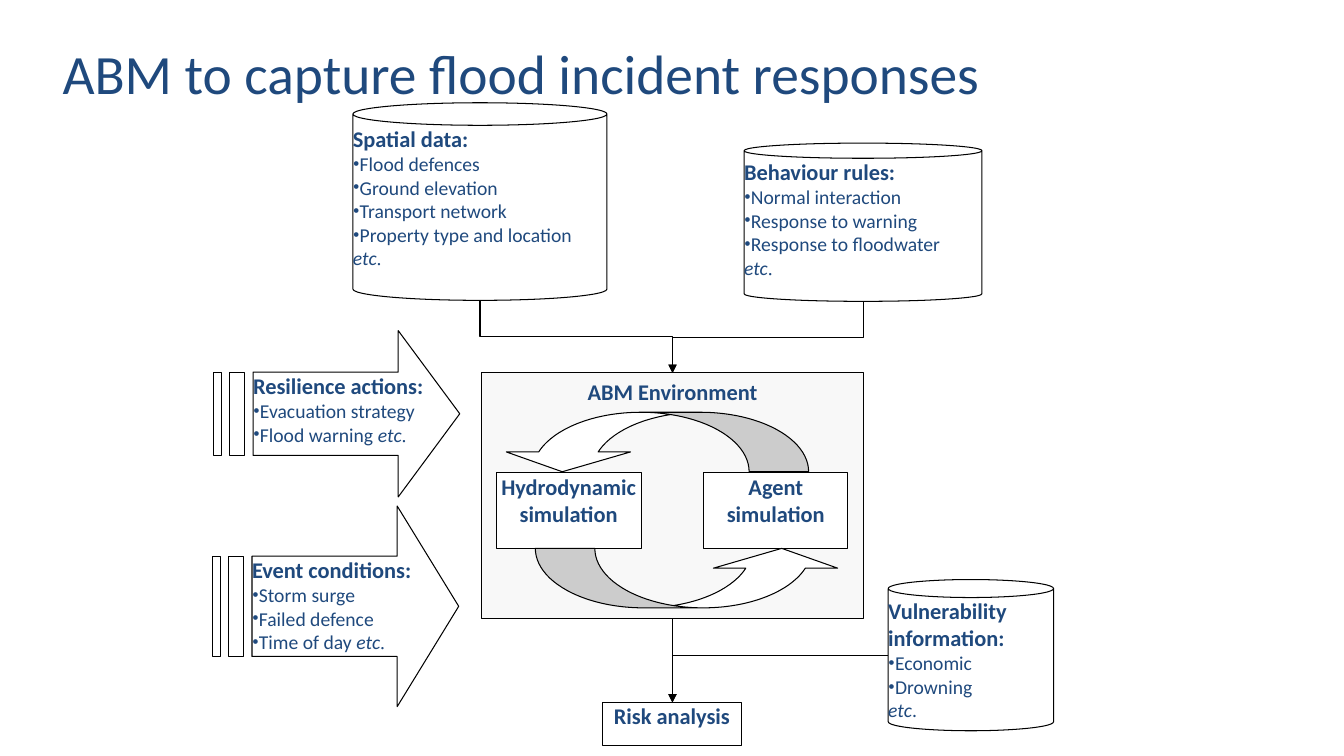
from lxml.etree import SubElement
from pptx import Presentation
from pptx.dml.color import RGBColor
from pptx.enum.shapes import MSO_CONNECTOR, MSO_SHAPE
from pptx.enum.text import MSO_ANCHOR, PP_ALIGN
from pptx.oxml.ns import qn
from pptx.util import Inches, Pt

NAVY = RGBColor(0x1F, 0x49, 0x7D)
BLACK = RGBColor(0, 0, 0)
WHITE = RGBColor(255, 255, 255)
PALE_GREY = RGBColor(0xF2, 0xF2, 0xF2)
BODY_FONT, STOP_FONT = "Calibri", "Times New Roman"

# Content: the first line of each list is its heading
TITLE = "ABM to capture flood incident responses"
DATA_STORES = [  # left, top, width, height, rim, font of last full stop, lines
    (3.5, 1.02, 2.52, 1.96, 0.114, STOP_FONT,
     ["Spatial data:", "Flood defences", "Ground elevation", "Transport network",
      "Property type and location", "etc."]),
    (7.38, 1.42, 2.36, 1.57, 0.096, STOP_FONT,
     ["Behaviour rules:", "Normal interaction", "Response to warning",
      "Response to floodwater", "etc."]),
    (8.81, 5.75, 1.64, 1.5, 0.119, BODY_FONT,
     ["Vulnerability information:", "Economic", "Drowning", "etc."]),
]
INPUT_ARROWS = [  # left, top, height, lines
    (2.12, 3.28, 1.65, ["Resilience actions:", "Evacuation strategy",
                        "Flood warning etc."]),
    (2.11, 5.02, 1.99, ["Event conditions:", "Storm surge", "Failed defence",
                        "Time of day etc."]),
]
ENVIRONMENT = (4.78, 3.7, 3.78, 2.44, "ABM Environment")
SIMULATIONS = [
    (6.98, 4.69, 1.43, 0.75, "Agent simulation"),
    (4.92, 4.69, 1.44, 0.75, "Hydrodynamic simulation"),
]
CYCLE_ARROWS = [(4.96, 4.09, 180), (5.31, 5.44, 0)]  # left, top, rotation
RISK_BOX = (5.98, 6.97, 1.37, 0.43, "Risk analysis")
CENTRE = 6.67  # x of the main flow

# Striped arrow proportions
ARROW_WIDTH, HEAD_START = 2.44, 1.83
STRIPES = [(0.16, 0.31), (0, 0.08)]
SHAFT_START = 0.39


def add_text(frame, lines, size=16, bold=True, align=PP_ALIGN.LEFT,
             space_after=0, stop_font=STOP_FONT, margins=(0, 0, 0, 0)):
    """Write a heading and, below it, smaller bulleted lines."""
    frame.word_wrap = True
    frame.vertical_anchor = MSO_ANCHOR.TOP
    (frame.margin_left, frame.margin_top,
     frame.margin_right, frame.margin_bottom) = map(Inches, margins)
    for index, line in enumerate(lines):
        paragraph = frame.paragraphs[0] if index == 0 else frame.add_paragraph()
        paragraph.alignment = align
        paragraph.space_before, paragraph.space_after = Pt(0), Pt(space_after)
        if index and not line.startswith("etc"):
            properties = paragraph._p.get_or_add_pPr()
            properties.set("marL", "0")
            properties.set("indent", "0")
            SubElement(properties, qn("a:buFont")).set("typeface", STOP_FONT)
            SubElement(properties, qn("a:buChar")).set("char", "•")
        start, etc, _ = line.partition("etc")
        for text, font_name, italic in ((start, BODY_FONT, False),
                                        (etc, BODY_FONT, True),
                                        ("." if etc else "", stop_font, False)):
            if text:
                run = paragraph.add_run()
                run.text = text
                run.font.name, run.font.italic = font_name, italic
                run.font.size = Pt(14 if index else size)
                run.font.bold = bold and index == 0
                run.font.color.rgb = NAVY


def style(shape, fill=WHITE):
    shape.shadow.inherit = False
    shape.fill.solid()
    shape.fill.fore_color.rgb = fill
    shape.line.color.rgb = BLACK
    shape.line.width = Pt(0.75)
    return shape


def add_box(shapes, left, top, width, height, text, fill=WHITE, margins=(0, 0, 0, 0)):
    box = style(shapes.add_shape(MSO_SHAPE.FLOWCHART_PROCESS, Inches(left), Inches(top),
                                 Inches(width), Inches(height)), fill)
    add_text(box.text_frame, [text], align=PP_ALIGN.CENTER, space_after=10,
             margins=margins)
    return box


def add_striped_arrow(shapes, left, top, height, lines):
    upper, lower = height / 4, height * 3 / 4
    outlines = [[(HEAD_START, 0), (HEAD_START, upper), (SHAFT_START, upper),
                 (SHAFT_START, lower), (HEAD_START, lower), (HEAD_START, height),
                 (ARROW_WIDTH, height / 2)]]
    outlines += [[(x1, upper), (x1, lower), (x2, lower), (x2, upper)]
                 for x1, x2 in STRIPES]
    outlines = [[(Inches(x), Inches(y)) for x, y in points] for points in outlines]
    builder = shapes.build_freeform(*outlines[0][0])
    for index, points in enumerate(outlines):
        if index:
            builder.move_to(*points[0])
        builder.add_line_segments(points[1:], close=True)
    arrow = style(builder.convert_to_shape(Inches(left), Inches(top)))
    add_text(arrow.text_frame, lines, margins=(SHAFT_START, upper, 0, 0))


def add_arrow(shapes, begin, end, kind=MSO_CONNECTOR.STRAIGHT, rotation=0, preset=None):
    """Add an arrow; begin and end are its corners before rotation."""
    arrow = shapes.add_connector(kind, *map(Inches, begin + end))
    arrow.line.color.rgb = BLACK
    arrow.line.width = Pt(0.75)
    SubElement(arrow.line._get_or_add_ln(), qn("a:tailEnd")).set("type", "triangle")
    properties = arrow._element.spPr
    SubElement(properties, qn("a:effectLst"))
    if rotation:
        properties.find(qn("a:xfrm")).set("rot", str(rotation * 60000))
    if preset:
        properties.find(qn("a:prstGeom")).set("prst", preset)


def add_drop(shapes, begin, end):
    """Add an elbow that goes down, across and down."""
    (x1, y1), (x2, y2) = begin, end
    middle_x, middle_y = (x1 + x2) / 2, (y1 + y2) / 2
    across, down = abs(x2 - x1) / 2, (y2 - y1) / 2
    side = 1 if x1 > x2 else -1
    add_arrow(shapes, (middle_x - side * down, middle_y - across),
              (middle_x + side * down, middle_y + across),
              MSO_CONNECTOR.ELBOW, rotation=90 if side == 1 else 270)


presentation = Presentation()
presentation.slide_width, presentation.slide_height = Inches(13.33), Inches(7.5)
slide = presentation.slides.add_slide(presentation.slide_layouts[5])
shapes = slide.shapes

# Data stores and input arrows
for left, top, width, height, rim, stop_font, lines in DATA_STORES:
    store = style(shapes.add_shape(MSO_SHAPE.CAN, Inches(left), Inches(top),
                                   Inches(width), Inches(height)))
    store.adjustments[0] = rim
    add_text(store.text_frame, lines, stop_font=stop_font)
for input_arrow in INPUT_ARROWS:
    add_striped_arrow(shapes, *input_arrow)

# Simulation environment with its cycle, and the result
group = shapes.add_group_shape()
environment = add_box(group.shapes, *ENVIRONMENT, fill=PALE_GREY,
                      margins=(0.1, 0.05, 0.1, 0.05))
fill_colour = environment._element.spPr.find(qn("a:solidFill"))[0]
SubElement(fill_colour, qn("a:alpha")).set("val", "50000")
for simulation in SIMULATIONS:
    add_box(group.shapes, *simulation)
for left, top, rotation in CYCLE_ARROWS:
    curve = style(group.shapes.add_shape(MSO_SHAPE.CURVED_UP_ARROW, Inches(left),
                                         Inches(top), Inches(3.06), Inches(0.59)))
    curve.rotation = rotation
    for index, value in enumerate((1.044, 2.087, 0.333)):
        curve.adjustments[index] = value
add_box(shapes, *RISK_BOX)

# Flow lines
environment_top, environment_bottom = 3.7, 6.14
risk_top = RISK_BOX[1]
add_drop(shapes, (8.56, 2.99), (CENTRE, environment_top))
add_drop(shapes, (4.76, 2.98), (CENTRE, environment_top))
add_arrow(shapes, (CENTRE, environment_bottom), (CENTRE, risk_top))
add_arrow(shapes, (CENTRE, risk_top), (8.81, 6.5), MSO_CONNECTOR.ELBOW,
          rotation=180, preset="bentConnector2")

# Title, in front
title = shapes.title
title.left, title.top = Inches(0.52), Inches(0.13)
title.width, title.height = Inches(10.32), Inches(1.18)
add_text(title.text_frame, [TITLE], size=39.6, bold=False, margins=(0.1, 0.05, 0.1, 0.05))
title.text_frame.vertical_anchor = MSO_ANCHOR.MIDDLE
title._element.getparent().append(title._element)

presentation.save("out.pptx")
